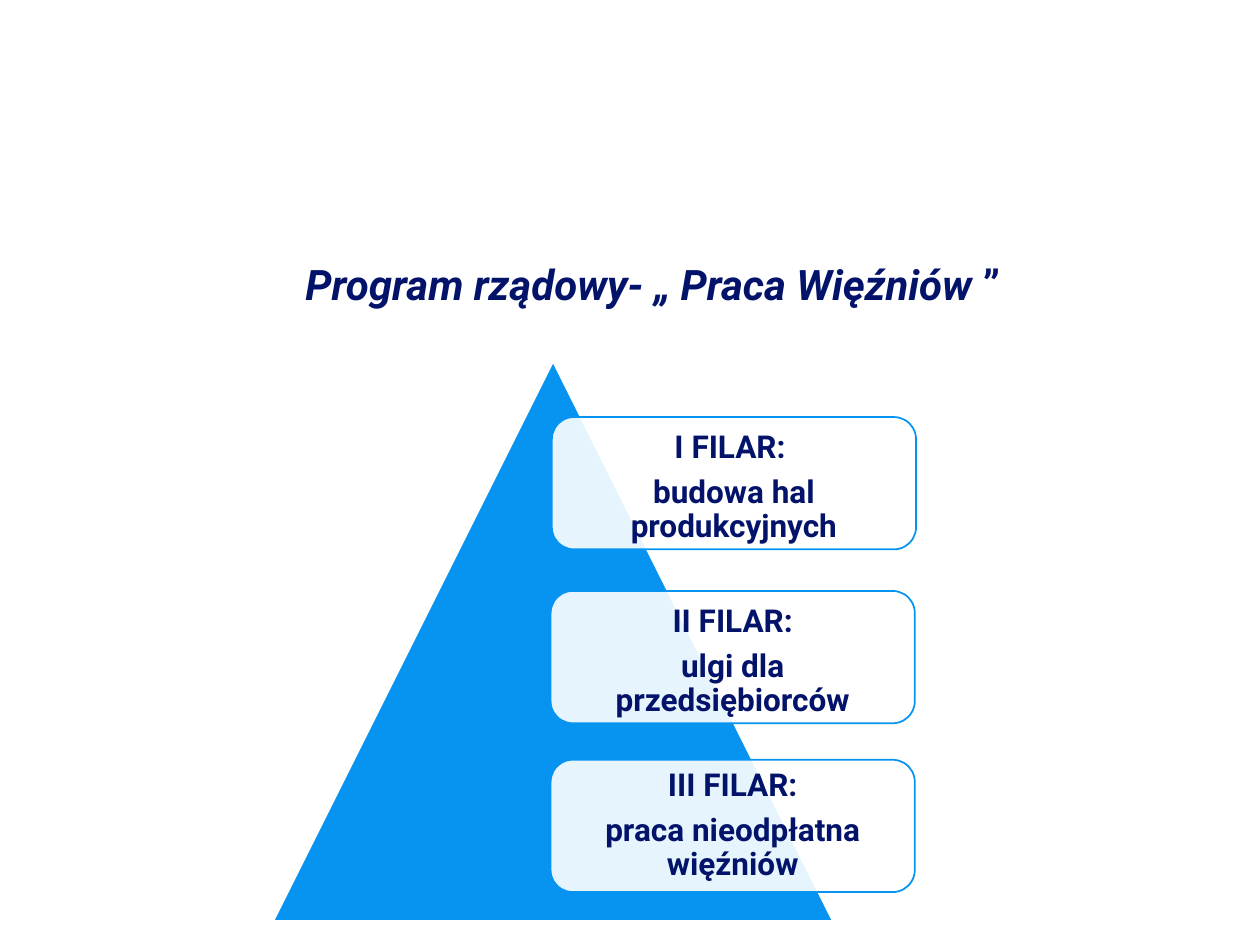
from lxml.etree import SubElement
from pptx import Presentation
from pptx.dml.color import RGBColor
from pptx.enum.shapes import MSO_SHAPE as SHAPE
from pptx.enum.text import MSO_ANCHOR as ANCHOR, PP_ALIGN as ALIGN
from pptx.oxml.ns import qn
from pptx.util import Pt

PX = 9144
FONT = "Roboto"
COLORS = {"navy": "03136A", "blue": "0794F0", "white": "FFFFFF"}
PILLARS = [
    (221, 44, 8, "I FILAR: ", "budowa hal produkcyjnych"),
    (220, 182, 8, "II FILAR:", "ulgi dla przedsiębiorców"),
    (220, 316, 0, "III FILAR:", "praca nieodpłatna więźniów"),
]


def px(*values):
    """Turn px lengths into EMU."""
    return [v * PX for v in values]


def rgb(name):
    """Look up a colour by name."""
    return RGBColor.from_string(COLORS[name])


def style_runs(p, size):
    """Give every run of a paragraph the bold navy face."""
    p.alignment = ALIGN.CENTER
    for r in p.runs:
        r.font.name = FONT
        r.font.size = Pt(size)
        r.font.bold = True
        r.font.color.rgb = rgb("navy")


def add_title(s, x, y, w, h):
    """Place the italic title with its upright closing quote."""
    sp = s.shapes.title
    sp.left, sp.top, sp.width, sp.height = px(x, y, w, h)
    tf = sp.text_frame
    tf.word_wrap = True
    tf.vertical_anchor = ANCHOR.MIDDLE
    p = tf.paragraphs[0]
    for text, italic in (("Program rządowy- „ Praca Więźniów ", True), ("”", False)):
        r = p.add_run()
        r.text = text
        r.font.italic = italic
    style_runs(p, 24)


def add_block(shapes, kind, box, fill, line):
    """Add a filled and outlined preset shape without shadow."""
    sp = shapes.add_shape(kind, *px(*box))
    sp.shadow.inherit = False
    sp.fill.solid()
    sp.fill.fore_color.rgb = rgb(fill)
    sp.line.color.rgb = rgb(line)
    sp.line.width = Pt(1)
    return sp


def add_card(shapes, box, drop, lines):
    """Add a translucent rounded card with its heading and description."""
    sp = add_block(shapes, SHAPE.ROUNDED_RECTANGLE, box, "white", "blue")
    clr = sp.fill._xPr.find(qn("a:solidFill"))[0]
    SubElement(clr, qn("a:alpha"), val="90000")
    tf = sp.text_frame
    tf.word_wrap = True
    tf.vertical_anchor = ANCHOR.MIDDLE
    tf.margin_left, tf.margin_right, tf.margin_top, tf.margin_bottom = px(7, 7, 7 + drop, 7)
    tf.text = "\n".join(lines)
    for p in tf.paragraphs:
        p.line_spacing = 0.9
        p.space_after = Pt(6.3)
        style_runs(p, 18)


def add_pyramid(s, x, y, size):
    """Draw the triangle with the three pillar cards over it."""
    shapes = s.shapes.add_group_shape().shapes
    add_block(shapes, SHAPE.ISOSCELES_TRIANGLE, (x, y, size, size), "blue", "white")
    for dx, dy, drop, *lines in PILLARS:
        add_card(shapes, (x + dx, y + dy, 289, 105), drop, lines)


def main():
    """Build and save the slide."""
    prs = Presentation()
    prs.slide_width, prs.slide_height = px(1000, 750)
    s = prs.slides.add_slide(prs.slide_layouts[5])
    add_title(s, 118, 186, 800, 78)
    add_pyramid(s, 217, 287, 444)
    prs.save("out.pptx")


if __name__ == "__main__":
    main()
